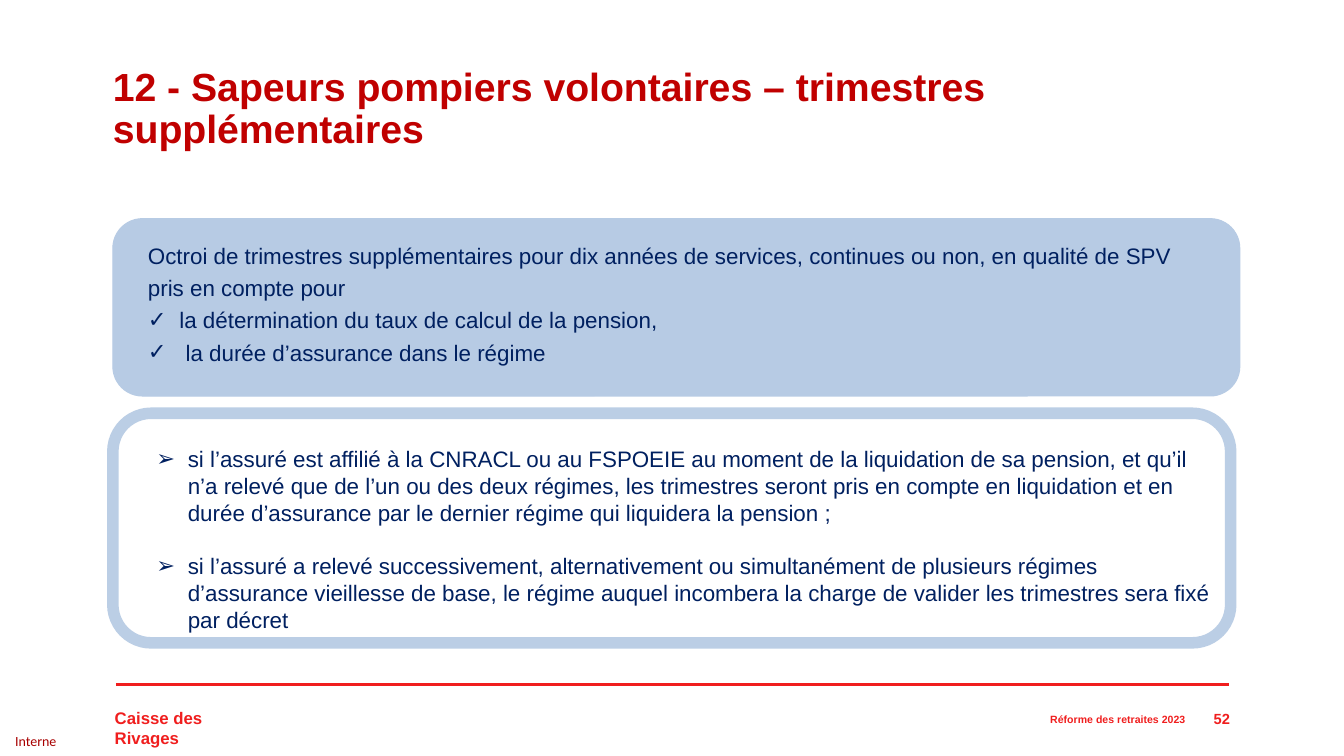
from dataclasses import dataclass

from lxml import etree
from pptx import Presentation
from pptx.dml.color import RGBColor
from pptx.enum import shapes, text
from pptx.oxml import ns
from pptx.util import Pt


@dataclass(frozen=True)
class Theme:
    """Colours, fonts and type sizes of the slide."""
    red: str = "F01E1E"
    title_red: str = "C00000"
    label_red: str = "A80000"
    navy: str = "002060"
    panel: str = "B7CBE4"
    frame: str = "BBCEE5"
    font: str = "Arial"
    label_font: str = "Calibri"
    title_size: float = 28
    body_size: float = 16
    brand_size: float = 12
    number_size: float = 10.5
    label_size: float = 10
    footer_size: float = 7.5


THEME = Theme()
RIGHT = text.PP_ALIGN.RIGHT
MIDDLE = text.MSO_ANCHOR.MIDDLE


def style(para, size, color, bold=False, font=THEME.font):
    """Format every run of a paragraph."""
    for span in para.runs:
        span.font.name = font
        span.font.size = Pt(size)
        span.font.bold = bold
        span.font.color.rgb = RGBColor.from_string(color)


def bullet(para, symbol, left, hanging):
    """Give a paragraph a bullet and a hanging indent in points."""
    props = para._p.get_or_add_pPr()
    props.set("marL", str(Pt(left)))
    props.set("indent", str(Pt(-hanging)))
    etree.SubElement(props, ns.qn("a:buFont")).set("typeface", THEME.font)
    etree.SubElement(props, ns.qn("a:buChar")).set("char", symbol)


def add_text(page, place, lines, size, color, bold=False, font=THEME.font,
             align=None, anchor=text.MSO_ANCHOR.TOP, wrap=True):
    """Add a text box with one paragraph per line and return its frame."""
    frame = page.shapes.add_textbox(*map(Pt, place)).text_frame
    frame.text = "\n".join(lines)
    frame.word_wrap = wrap
    frame.vertical_anchor = anchor
    for para in frame.paragraphs:
        para.alignment = align
        style(para, size, color, bold, font)
    return frame


def add_panel(page, place, line_color, line_width, fill=None):
    """Add a rounded panel, filled or outlined only."""
    box = page.shapes.add_shape(shapes.MSO_SHAPE.ROUNDED_RECTANGLE, *map(Pt, place))
    box.shadow.inherit = False
    if fill:
        box.fill.solid()
        box.fill.fore_color.rgb = RGBColor.from_string(fill)
    else:
        box.fill.background()
    box.line.color.rgb = RGBColor.from_string(line_color)
    box.line.width = Pt(line_width)


def add_rule(page, left, right, top):
    """Add the horizontal line above the footer."""
    rule = page.shapes.add_connector(
        shapes.MSO_CONNECTOR.STRAIGHT, Pt(left), Pt(top), Pt(right), Pt(top))
    rule.line.color.rgb = RGBColor.from_string(THEME.red)
    rule.line.width = Pt(2)
    etree.SubElement(rule._element.spPr, ns.qn("a:effectLst"))


def set_title(page, place, wording):
    """Place and format the title placeholder."""
    title = page.shapes.title
    title.left, title.top, title.width, title.height = map(Pt, place)
    frame = title.text_frame
    frame.text = wording
    frame.word_wrap = True
    frame.auto_size = text.MSO_AUTO_SIZE.NONE
    frame.vertical_anchor = text.MSO_ANCHOR.TOP
    para = frame.paragraphs[0]
    para.alignment = text.PP_ALIGN.LEFT
    para.line_spacing = 0.9
    style(para, THEME.title_size, THEME.title_red, bold=True)


def add_grant(page):
    """Add the filled panel on the additional quarters."""
    add_panel(page, (80.6, 156.2, 805, 126.7), THEME.panel, 0.75, THEME.panel)
    frame = add_text(page, (98.6, 165.6, 769.7, 64), [
        "Octroi de trimestres supplémentaires pour dix années de services, "
        "continues ou non, en qualité de SPV pris en compte pour",
        "la détermination du taux de calcul de la pension,",
        " la durée d’assurance dans le régime",
    ], THEME.body_size, THEME.navy)
    for para in frame.paragraphs:
        para.line_spacing = 1.2
    for para in frame.paragraphs[1:]:
        bullet(para, "✓", 22.5, 22.5)


def add_cases(page):
    """Add the outlined panel on the two affiliation cases."""
    place = (80.6, 295.2, 798.5, 164)
    add_panel(page, place, THEME.frame, 8.25)
    frame = add_text(page, place, [
        "si l’assuré est affilié à la CNRACL ou au FSPOEIE au moment de la "
        "liquidation de sa pension, et qu’il n’a relevé que de l’un ou des deux "
        "régimes, les trimestres seront pris en compte en liquidation et en durée "
        "d’assurance par le dernier régime qui liquidera la pension ;",
        "si l’assuré a relevé successivement, alternativement ou simultanément de "
        "plusieurs régimes d’assurance vieillesse de base, le régime auquel "
        "incombera la charge de valider les trimestres sera fixé par décret",
    ], THEME.body_size, THEME.navy)
    frame.margin_top = Pt(22.8)
    frame.paragraphs[1].space_before = Pt(19.2)
    for para in frame.paragraphs:
        bullet(para, "➢", 46.5, 22.5)


def add_footer(page):
    """Add the rule, the issuer, the subject, the number and the label."""
    add_rule(page, 82.8, 877.7, 488.9)
    add_text(page, (74.9, 501.8, 122.4, 21.6), ["Caisse des Rivages"],
             THEME.brand_size, THEME.red, bold=True, wrap=False)
    add_text(page, (570.2, 504, 283.7, 20.2), ["Réforme des retraites 2023"],
             THEME.footer_size, THEME.red, bold=True, align=RIGHT, anchor=MIDDLE)
    add_text(page, (843.1, 501.8, 42.5, 22.3), ["52"],
             THEME.number_size, THEME.red, bold=True, align=RIGHT, anchor=MIDDLE)
    label = add_text(page, (0, 519.1, 51.1, 20.9), ["Interne"], THEME.label_size,
                     THEME.label_red, font=THEME.label_font, anchor=MIDDLE)
    label.margin_left = Pt(10.8)
    label.margin_top = label.margin_right = label.margin_bottom = 0


def main():
    """Build the slide and save it."""
    deck = Presentation()
    deck.slide_width, deck.slide_height = Pt(960), Pt(540)
    page = deck.slides.add_slide(deck.slide_layouts[5])
    set_title(page, (73.4, 44.6, 822.2, 36.7),
              "12 - Sapeurs pompiers volontaires – trimestres supplémentaires")
    add_grant(page)
    add_cases(page)
    add_footer(page)
    deck.save("out.pptx")


if __name__ == "__main__":
    main()
